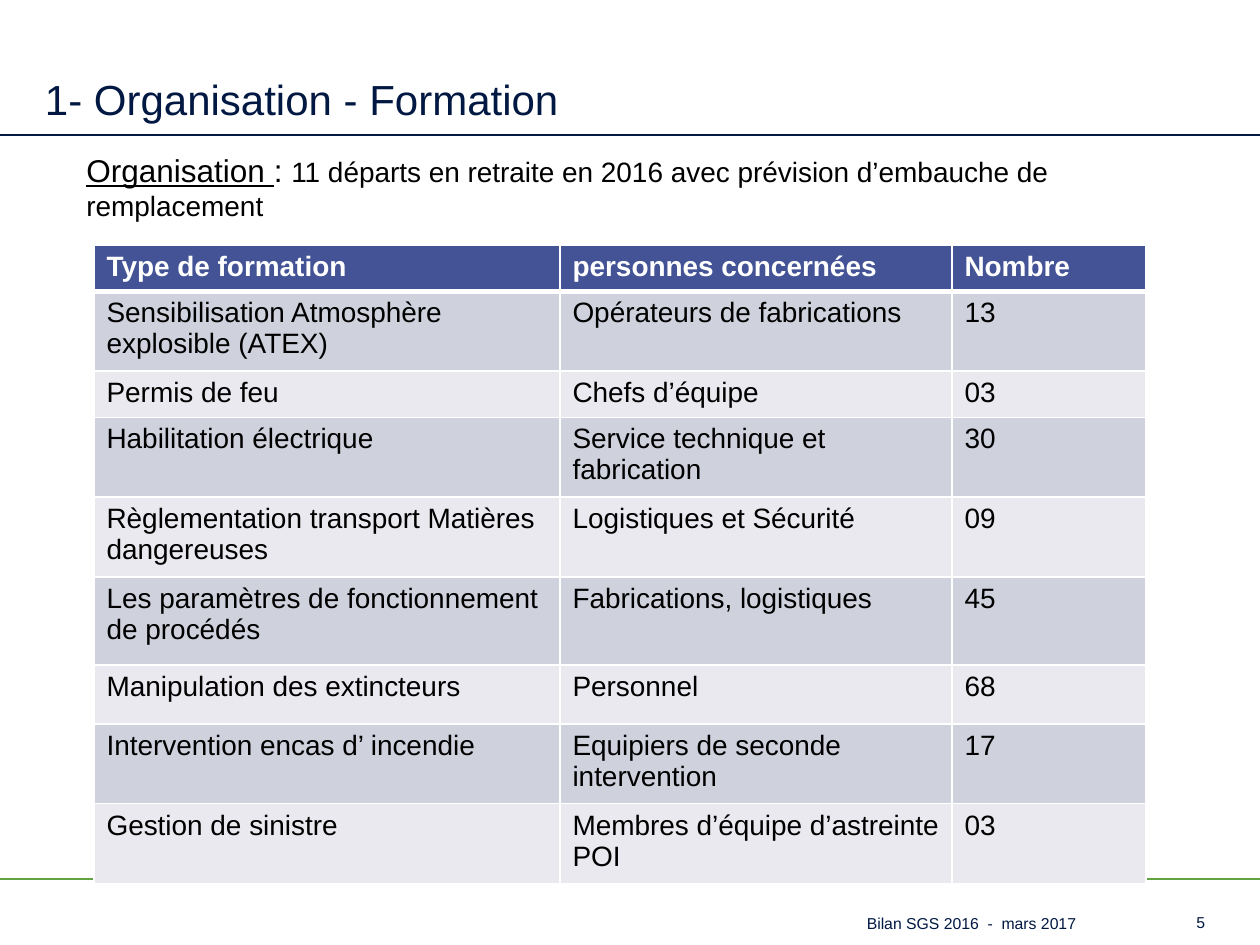
from lxml.etree import SubElement
from pptx import Presentation
from pptx.dml.color import RGBColor
from pptx.enum.shapes import MSO_CONNECTOR
from pptx.enum.text import MSO_ANCHOR, PP_ALIGN
from pptx.oxml.ns import qn
from pptx.util import Pt

EMU_PER_PX = 914400 / 126
WIDTH, HEIGHT = 1260, 945
COLORS = {
    "navy": "001842",
    "green": "64A342",
    "header": "435395",
    "dark band": "CFD1DD",
    "light band": "E9E9EF",
    "white": "FFFFFF",
    "black": "000000",
}
COLUMN_WIDTHS = [466, 392, 194]
ROW_HEIGHTS = [45, 79, 45, 45, 79, 88, 59, 79, 79]
TRAININGS = [
    ("Type de formation", "personnes concernées", "Nombre"),
    ("Sensibilisation Atmosphère explosible (ATEX)", "Opérateurs de fabrications", "13"),
    ("Permis de feu", "Chefs d’équipe", "03"),
    ("Habilitation électrique", "Service technique et fabrication", "30"),
    ("Règlementation transport Matières dangereuses", "Logistiques et Sécurité", "09"),
    ("Les paramètres de fonctionnement de procédés", "Fabrications, logistiques", "45"),
    ("Manipulation des extincteurs", "Personnel", "68"),
    ("Intervention encas d’ incendie", "Equipiers de seconde intervention", "17"),
    ("Gestion de sinistre", "Membres d’équipe d’astreinte POI", "03"),
]


def px(length):
    return round(length * EMU_PER_PX)


def rgb(name):
    return RGBColor.from_string(COLORS[name])


class SlideBuilder:
    def __init__(self, slide, font_name="Arial"):
        self.slide = slide
        self.font_name = font_name

    def style(self, run, size, color, bold=False, underline=False):
        font = run.font
        font.name = self.font_name
        font.size = Pt(size)
        font.color.rgb = rgb(color)
        font.bold = bold
        font.underline = underline

    def rule(self, y, color):
        """Draw a line across the whole slide."""
        line = self.slide.shapes.add_connector(
            MSO_CONNECTOR.STRAIGHT, 0, px(y), px(WIDTH), px(y))
        line.line.color.rgb = rgb(color)
        line.line.width = Pt(1.5)
        SubElement(line._element.spPr, qn("a:effectLst"))

    def text_box(self, left, top, width, height):
        shape = self.slide.shapes.add_textbox(px(left), px(top), px(width), px(height))
        shape.text_frame.word_wrap = True
        return shape.text_frame

    def label(self, text, left, top, width, height, size, align=PP_ALIGN.LEFT):
        """Add navy text resting on the bottom of a box without margins."""
        frame = self.text_box(left, top, width, height)
        frame.margin_left = frame.margin_right = 0
        frame.margin_top = frame.margin_bottom = 0
        frame.vertical_anchor = MSO_ANCHOR.BOTTOM
        frame.text = text
        paragraph = frame.paragraphs[0]
        paragraph.alignment = align
        self.style(paragraph.runs[0], size, "navy")

    def rich_text(self, parts, left, top, width, height):
        """Add one paragraph from (text, size, underline) parts."""
        paragraph = self.text_box(left, top, width, height).paragraphs[0]
        for text, size, underline in parts:
            run = paragraph.add_run()
            run.text = text
            self.style(run, size, "black", underline=underline)

    def borders(self, cell, bottom_width):
        properties = cell._tc.get_or_add_tcPr()
        for side, width in (("L", 1), ("R", 1), ("T", 1), ("B", bottom_width)):
            line = SubElement(properties, qn(f"a:ln{side}"), w=str(Pt(width)))
            fill = SubElement(line, qn("a:solidFill"))
            SubElement(fill, qn("a:srgbClr"), val=COLORS["white"])

    def table(self, rows, left, top, column_widths, row_heights):
        table = self.slide.shapes.add_table(
            len(rows), len(column_widths), px(left), px(top),
            px(sum(column_widths)), px(sum(row_heights))).table
        table.horz_banding = False
        for column, width in zip(table.columns, column_widths):
            column.width = px(width)
        for index, (row, height, texts) in enumerate(zip(table.rows, row_heights, rows)):
            row.height = px(height)
            is_header = index == 0
            band = "dark band" if index % 2 else "light band"
            for cell, text in zip(row.cells, texts):
                self.borders(cell, 3 if is_header else 1)
                cell.fill.solid()
                cell.fill.fore_color.rgb = rgb("header" if is_header else band)
                cell.text_frame.text = text
                self.style(cell.text_frame.paragraphs[0].runs[0], 16,
                           "white" if is_header else "black", bold=is_header)


def main():
    presentation = Presentation()
    presentation.slide_width = px(WIDTH)
    presentation.slide_height = px(HEIGHT)
    builder = SlideBuilder(presentation.slides.add_slide(presentation.slide_layouts[6]))

    builder.rule(135, "navy")
    builder.rule(879, "green")
    builder.label("1- Organisation - Formation", 45, 16, 1160, 108, 24)
    builder.label("5", 1081, 910, 124, 22, 9, PP_ALIGN.RIGHT)
    builder.label("Bilan SGS 2016  -  mars 2017", 521, 883, 555, 50, 9, PP_ALIGN.RIGHT)
    builder.table(TRAININGS, 94, 245, COLUMN_WIDTHS, ROW_HEIGHTS)
    builder.rich_text([
        ("Organisation ", 18, True),
        (": ", 18, False),
        ("11 départs en retraite en 2016 avec prévision d’embauche de remplacement", 16, False),
    ], 74, 145, 1012, 118)

    presentation.save("out.pptx")


if __name__ == "__main__":
    main()
